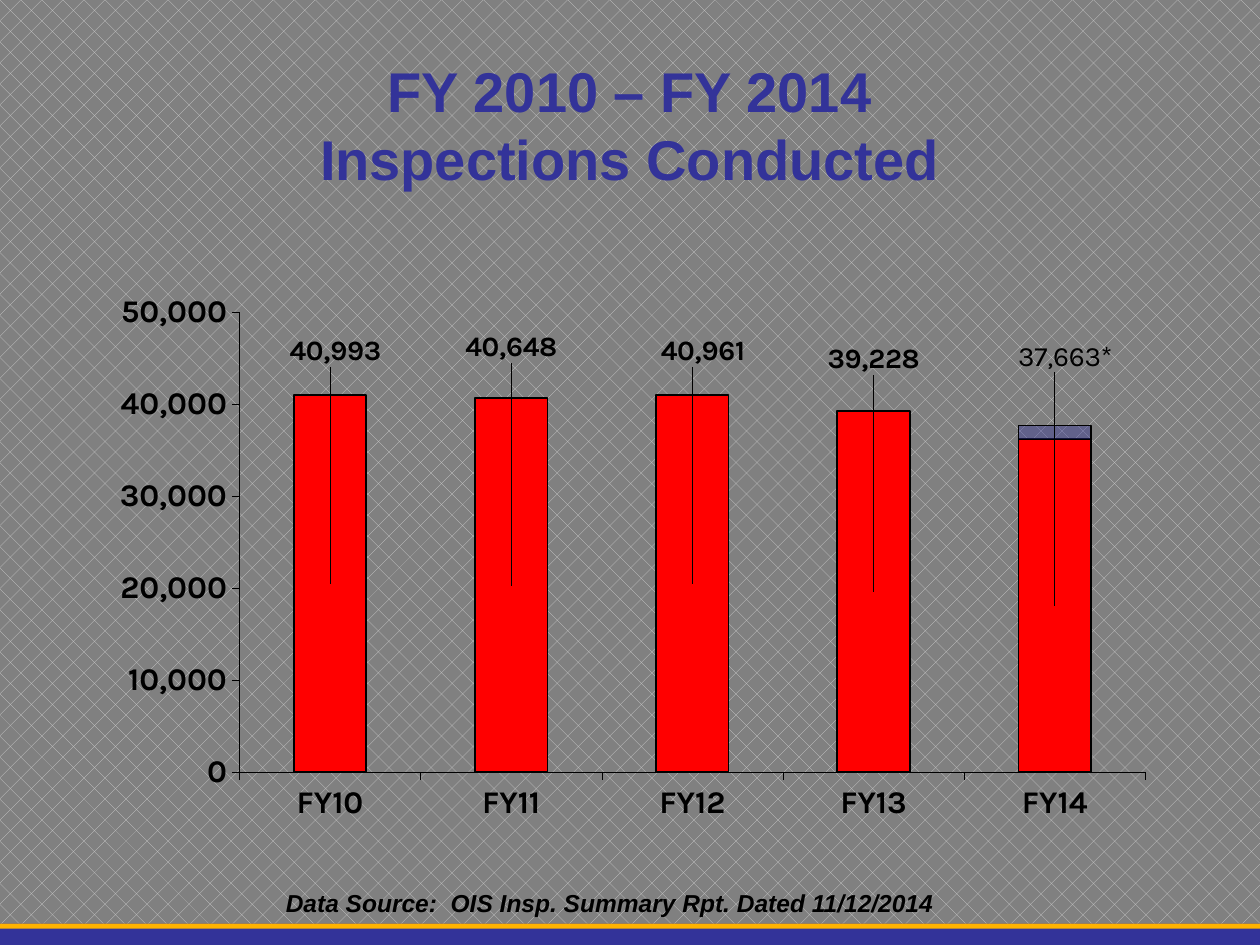
"""Build the slide on inspections conducted, FY 2010 to FY 2014."""
from dataclasses import dataclass

from pptx import Presentation
from pptx import oxml
from pptx import util as u
from pptx.chart import data as chart_data
from pptx.dml.color import RGBColor
from pptx.enum import chart as charts, dml, shapes, text
from pptx.oxml import ns


@dataclass(frozen=True)
class Theme:
    navy: str = "333399"
    gold: str = "FFB300"
    red: str = "FF0000"
    black: str = "000000"
    ground: str = "808080"
    lattice: str = "CFCFCF"
    text_font: str = "Arial"
    chart_font: str = "Karla"
    title_size: int = 32
    axis_size: int = 18
    label_size: int = 16
    source_size: int = 14


THEME = Theme()
WIDTH, HEIGHT = 10, 7.5

TITLE = "FY 2010 – FY 2014\vInspections Conducted"
SOURCE = "Data Source:  OIS Insp. Summary Rpt. Dated 11/12/2014"
YEARS = ["FY10", "FY11", "FY12", "FY13", "FY14"]
SERIES = [
    {"name": "Series 1", "values": [40993, 40648, 40961, 39228, 36163],
     "color": THEME.red, "line": 1},
    {"name": "Series 2", "values": [0, 0, 0, 0, 1500],
     "color": THEME.navy, "line": 0.75, "alpha": 40},
]
LABELS = [
    {"shift": (0.005, -0.42)},
    {"shift": (0, -0.43)},
    {"shift": (0.01, -0.42)},
    {"shift": (0, -0.42)},
    {"shift": (0.01, -0.45), "text": "37,663*", "bold": False},
]
BANDS = [(THEME.navy, 0.17), (THEME.gold, 0.04)]
BAND_TOP = 7.33
PLOT = {"x": 0.13, "y": 0.038, "w": 0.857, "h": 0.832}


def rgb(value):
    return RGBColor.from_string(value)


def set_font(font, name, size, color=THEME.black, bold=True, italic=False):
    font.name, font.size = name, u.Pt(size)
    font.bold, font.italic = bold, italic
    font.color.rgb = rgb(color)


def set_line(line, width):
    line.color.rgb = rgb(THEME.black)
    line.width = u.Pt(width)


def add_text(slide, content, box, align=text.PP_ALIGN.LEFT,
             anchor=text.MSO_ANCHOR.TOP, wrap=True, **font):
    shape = slide.shapes.add_textbox(*map(u.Inches, box))
    frame = shape.text_frame
    frame.word_wrap, frame.vertical_anchor = wrap, anchor
    paragraph = frame.paragraphs[0]
    paragraph.text, paragraph.alignment = content, align
    for run in paragraph.runs:
        set_font(run.font, **font)


def add_band(slide, color, height):
    shape = slide.shapes.add_shape(
        shapes.MSO_SHAPE.RECTANGLE, 0, u.Inches(BAND_TOP),
        u.Inches(WIDTH), u.Inches(height))
    shape.shadow.inherit = False
    shape.fill.solid()
    shape.fill.fore_color.rgb = rgb(color)
    shape.line.fill.background()


def manual_layout(values, inner=False):
    modes = '<c:layoutTarget val="inner"/><c:xMode val="edge"/><c:yMode val="edge"/>'
    sizes = "".join(f'<c:{key} val="{value}"/>' for key, value in values.items())
    return oxml.parse_xml(
        f'<c:layout {ns.nsdecls("c")}><c:manualLayout>'
        f'{modes if inner else ""}{sizes}</c:manualLayout></c:layout>')


def clear_fill():
    return oxml.parse_xml(
        f'<c:spPr {ns.nsdecls("c", "a")}><a:noFill/><a:ln><a:noFill/></a:ln></c:spPr>')


def style_axes(chart):
    for axis in (chart.category_axis, chart.value_axis):
        axis.has_major_gridlines = False
        axis.major_tick_mark = charts.XL_TICK_MARK.OUTSIDE
        axis.minor_tick_mark = charts.XL_TICK_MARK.NONE
        set_font(axis.tick_labels.font, THEME.chart_font, THEME.axis_size)
        set_line(axis.format.line, 0.25)
    chart.category_axis.tick_label_position = charts.XL_TICK_LABEL_POSITION.LOW
    axis = chart.value_axis
    axis.minimum_scale, axis.maximum_scale, axis.major_unit = 0, 50000, 10000
    axis.tick_labels.number_format = "#,##0"
    axis.tick_labels.number_format_is_linked = False


def style_series(series, color, line, alpha=None):
    series.format.fill.solid()
    series.format.fill.fore_color.rgb = rgb(color)
    set_line(series.format.line, line)
    if alpha:
        fill = series.format.fill.fore_color
        target = series._element.find(ns.qn("c:spPr")).find(
            f'{ns.qn("a:solidFill")}/{ns.qn("a:srgbClr")}')
        target.append(oxml.parse_xml(
            f'<a:alpha {ns.nsdecls("a")} val="{alpha * 1000}"/>'))


def label_points(series):
    labels = series.data_labels
    labels.show_value = True
    labels.number_format, labels.number_format_is_linked = "#,##0", False
    set_font(labels.font, THEME.chart_font, THEME.label_size)
    for index, item in enumerate(LABELS):
        label = series.points[index].data_label
        bold = item.get("bold", True)
        if "text" in item:
            paragraph = label.text_frame.paragraphs[0]
            run = paragraph.add_run()
            run.text = item["text"]
            font = run.font
        else:
            font = label.font
        set_font(font, THEME.chart_font, THEME.label_size, bold=bold)
        label.position = charts.XL_LABEL_POSITION.CENTER
    for element, item in zip(labels._element.findall(ns.qn("c:dLbl")), LABELS):
        shift = dict(zip("xy", item["shift"]))
        element.find(ns.qn("c:idx")).addnext(manual_layout(shift))


def add_inspections_chart(slide, box):
    data = chart_data.CategoryChartData(number_format="#,##0")
    data.categories = YEARS
    for item in SERIES:
        data.add_series(item["name"], item["values"])
    chart = slide.shapes.add_chart(
        charts.XL_CHART_TYPE.COLUMN_STACKED, *map(u.Inches, box), data).chart
    chart.has_title = chart.has_legend = False
    set_font(chart.font, THEME.chart_font, THEME.axis_size)
    plot = chart.plots[0]
    plot.gap_width, plot.overlap, plot.vary_by_categories = 150, 100, False
    style_axes(chart)
    for series, item in zip(plot.series, SERIES):
        style_series(series, item["color"], item["line"], item.get("alpha"))
    label_points(plot.series[0])

    body = chart._chartSpace.find(ns.qn("c:chart"))
    body.addnext(clear_fill())
    area = body.find(ns.qn("c:plotArea"))
    for layout in area.findall(ns.qn("c:layout")):
        area.remove(layout)
    area.insert(0, manual_layout(PLOT, inner=True))
    area.append(clear_fill())


def main():
    presentation = Presentation()
    presentation.slide_width = u.Inches(WIDTH)
    presentation.slide_height = u.Inches(HEIGHT)
    slide = presentation.slides.add_slide(presentation.slide_layouts[6])
    fill = slide.background.fill
    fill.patterned()
    fill.pattern = dml.MSO_PATTERN.DIAGONAL_BRICK
    fill.fore_color.rgb, fill.back_color.rgb = rgb(THEME.lattice), rgb(THEME.ground)
    for color, height in BANDS:
        add_band(slide, color, height)
    add_text(slide, TITLE, (0.5, 0.3, 9, 1.37), align=text.PP_ALIGN.CENTER,
             anchor=text.MSO_ANCHOR.MIDDLE, name=THEME.text_font,
             size=THEME.title_size, color=THEME.navy)
    add_inspections_chart(slide, (0.81, 2.31, 8.39, 4.39))
    add_text(slide, SOURCE, (2.17, 7, 5.37, 0.34), wrap=False,
             name=THEME.text_font, size=THEME.source_size, italic=True)
    presentation.save("out.pptx")


if __name__ == "__main__":
    main()
